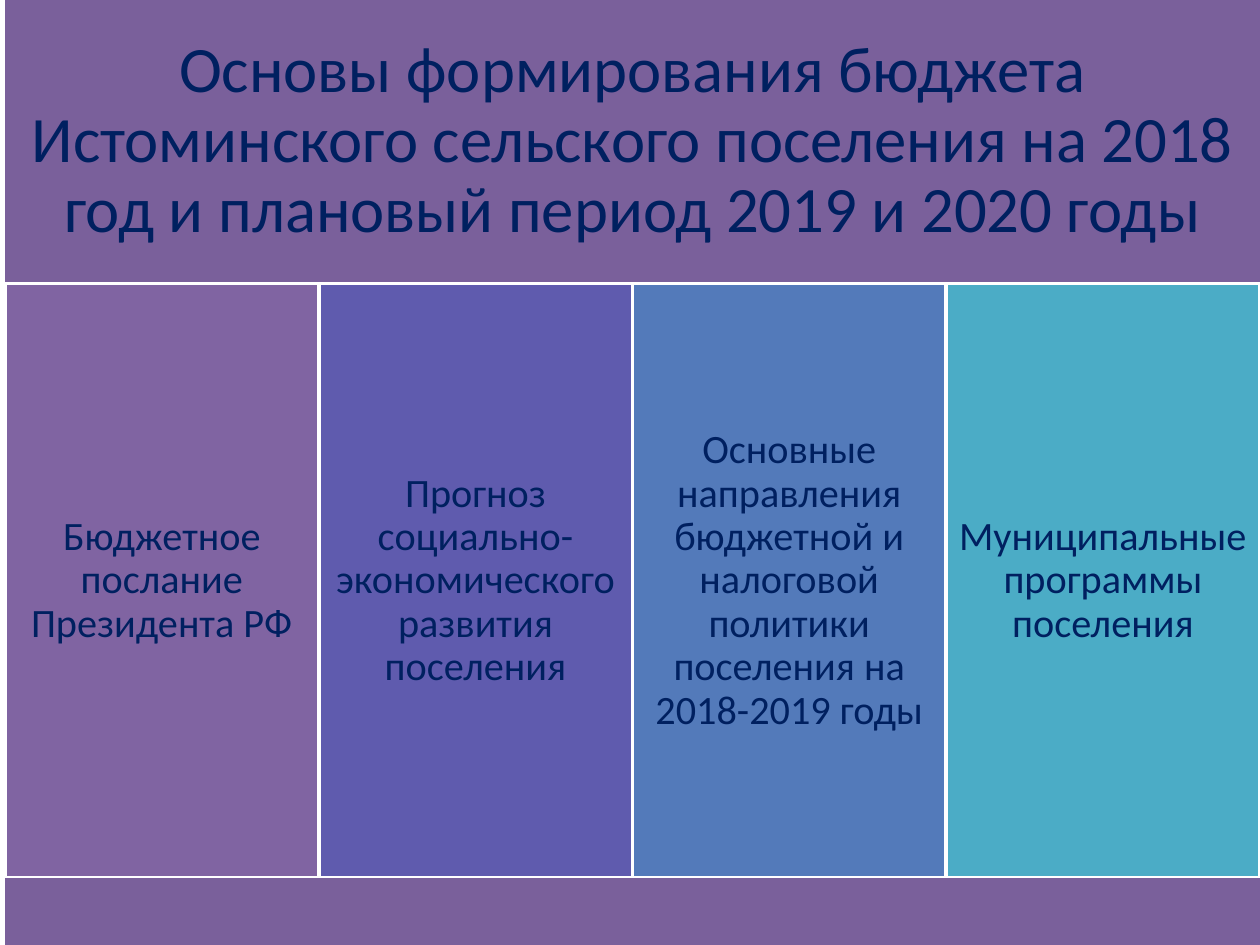
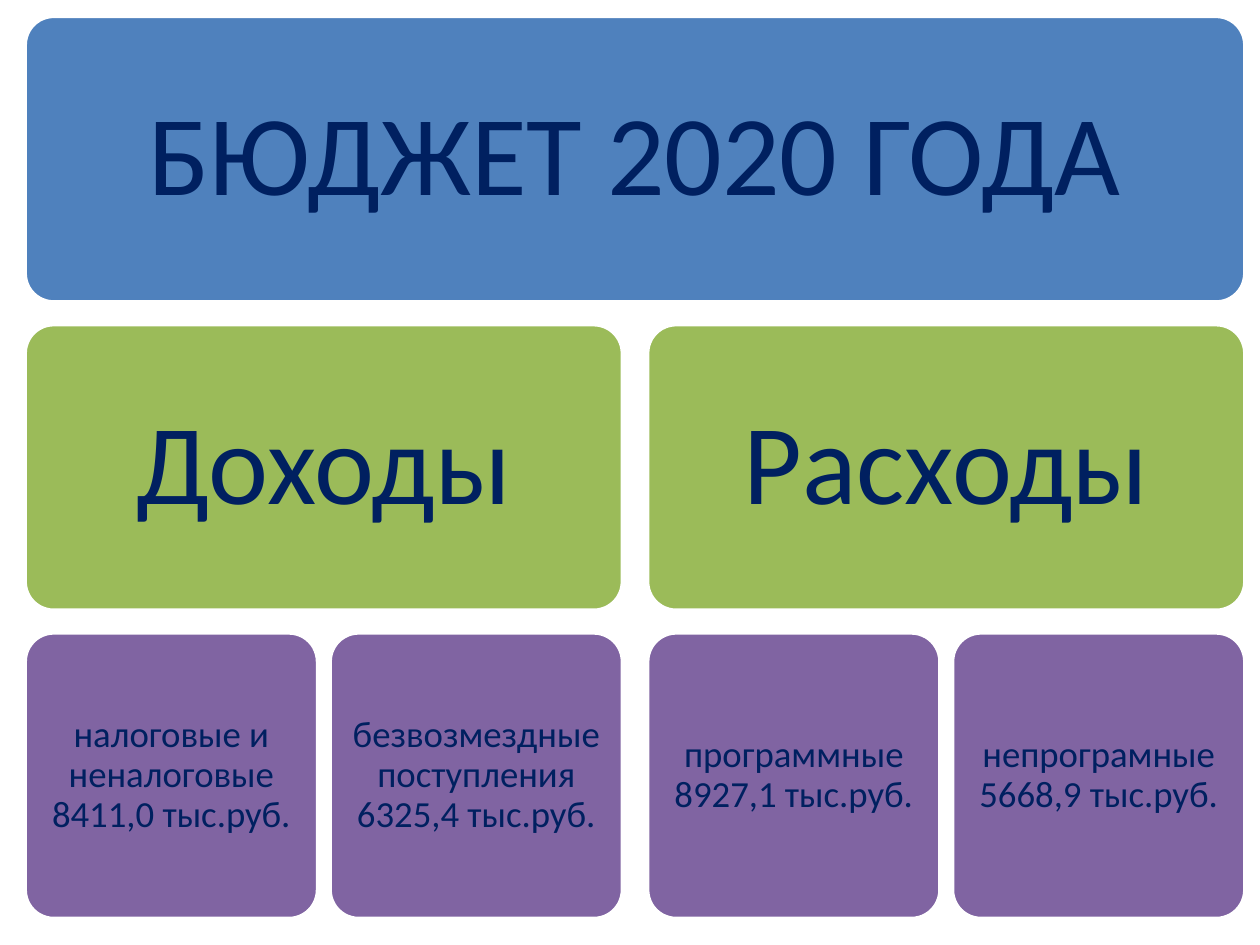
from dataclasses import dataclass

from pptx import Presentation
from pptx import util as u
from pptx.dml.color import RGBColor
from pptx.enum import shapes, text

SLIDE_WIDTH, SLIDE_HEIGHT = 10, 7.5
FONT = "Calibri"
NAVY, WHITE = "002060", "FFFFFF"
BAND, PURPLE, INDIGO = "7A609B", "8064A2", "5F5BAE"
STEEL, TEAL, BLUE, GREEN = "537ABA", "4BACC6", "4F81BD", "9BBB59"
RECTANGLE = shapes.MSO_SHAPE.RECTANGLE
ROUNDED = shapes.MSO_SHAPE.ROUNDED_RECTANGLE


@dataclass(frozen=True)
class Area:
    left: float
    top: float
    width: float
    height: float

    def cell(self, column: int, columns: int, row: int = 0, rows: int = 1,
             column_gap: float = 0, row_gap: float = 0) -> "Area":
        width = (self.width - (columns - 1) * column_gap) / columns
        height = (self.height - (rows - 1) * row_gap) / rows
        return Area(self.left + column * (width + column_gap),
                    self.top + row * (height + row_gap), width, height)


@dataclass(frozen=True)
class BlockStyle:
    preset: shapes.MSO_SHAPE
    size: float
    inset: float
    outlined: bool = True


TITLE_BAND = BlockStyle(RECTANGLE, 37, 0.15, outlined=False)
PILLAR = BlockStyle(RECTANGLE, 23, 0.1)
HEADING = BlockStyle(ROUNDED, 65, 0.27)
LEAF = BlockStyle(ROUNDED, 21, 0.09)

HEADER_HEIGHT, PILLAR_HEIGHT = 0.3 * SLIDE_HEIGHT, 4.72
PANEL = Area(0.04, 0, SLIDE_WIDTH - 0.04, SLIDE_HEIGHT)
TREE = Area(0.2, 0.13, 9.68, 7.16)
ROW_GAP, BRANCH_GAP, LEAF_GAP = 0.18, 0.2, 0.1

PILLARS = [
    ("Бюджетное послание Президента РФ", PURPLE),
    ("Прогноз социально-экономического развития поселения", INDIGO),
    ("Основные направления бюджетной и налоговой политики поселения на 2018-2019 годы", STEEL),
    ("Муниципальные программы поселения", TEAL),
]
BRANCHES = {
    "Доходы": ["налоговые и неналоговые 8411,0 тыс.руб.",
               "безвозмездные поступления 6325,4 тыс.руб."],
    "Расходы": ["программные 8927,1 тыс.руб.",
                "непрограмные 5668,9 тыс.руб."],
}


def color(value: str) -> RGBColor:
    return RGBColor.from_string(value)


def add_block(slide, area: Area, fill: str, style: BlockStyle, wording: str = "") -> None:
    shape = slide.shapes.add_shape(
        style.preset, u.Inches(area.left), u.Inches(area.top),
        u.Inches(area.width), u.Inches(area.height))
    shape.shadow.inherit = False
    shape.fill.solid()
    shape.fill.fore_color.rgb = color(fill)
    if style.outlined:
        shape.line.color.rgb = color(WHITE)
        shape.line.width = u.Pt(2)
    else:
        shape.line.fill.background()
    if style.preset == ROUNDED:
        shape.adjustments[0] = 0.1
    if not wording:
        return
    frame = shape.text_frame
    frame.word_wrap = True
    frame.vertical_anchor = text.MSO_ANCHOR.MIDDLE
    frame.margin_left = frame.margin_right = u.Inches(style.inset)
    frame.margin_top = frame.margin_bottom = u.Inches(style.inset)
    frame.text = wording
    paragraph = frame.paragraphs[0]
    paragraph.alignment = text.PP_ALIGN.CENTER
    paragraph.line_spacing = 0.9
    for run in paragraph.runs:
        run.font.name = FONT
        run.font.size = u.Pt(style.size)
        run.font.color.rgb = color(NAVY)


def build_foundations(slide) -> None:
    header = Area(PANEL.left, 0, PANEL.width, HEADER_HEIGHT)
    middle = Area(PANEL.left, HEADER_HEIGHT, PANEL.width, PILLAR_HEIGHT)
    footer_top = HEADER_HEIGHT + PILLAR_HEIGHT
    footer = Area(PANEL.left, footer_top, PANEL.width, SLIDE_HEIGHT - footer_top)
    add_block(slide, header, BAND, TITLE_BAND,
              "Основы формирования бюджета Истоминского сельского поселения "
              "на 2018 год и плановый период 2019 и 2020 годы")
    for column, (wording, fill) in enumerate(PILLARS):
        add_block(slide, middle.cell(column, len(PILLARS)), fill, PILLAR, wording)
    add_block(slide, footer, BAND, TITLE_BAND)


def build_budget_tree(slide) -> None:
    root, branch_row, leaf_row = (
        TREE.cell(0, 1, row, 3, row_gap=ROW_GAP) for row in range(3))
    add_block(slide, root, BLUE, HEADING, "БЮДЖЕТ 2020 ГОДА")
    for column, (branch, leaves) in enumerate(BRANCHES.items()):
        add_block(slide, branch_row.cell(column, len(BRANCHES), column_gap=BRANCH_GAP),
                  GREEN, HEADING, branch)
        leaf_area = leaf_row.cell(column, len(BRANCHES), column_gap=BRANCH_GAP)
        for position, leaf in enumerate(leaves):
            add_block(slide, leaf_area.cell(position, len(leaves), column_gap=LEAF_GAP),
                      PURPLE, LEAF, leaf)


def main() -> None:
    presentation = Presentation()
    presentation.slide_width = u.Inches(SLIDE_WIDTH)
    presentation.slide_height = u.Inches(SLIDE_HEIGHT)
    blank = presentation.slide_layouts[6]
    for build in (build_foundations, build_budget_tree):
        build(presentation.slides.add_slide(blank))
    presentation.save("out.pptx")


if __name__ == "__main__":
    main()
